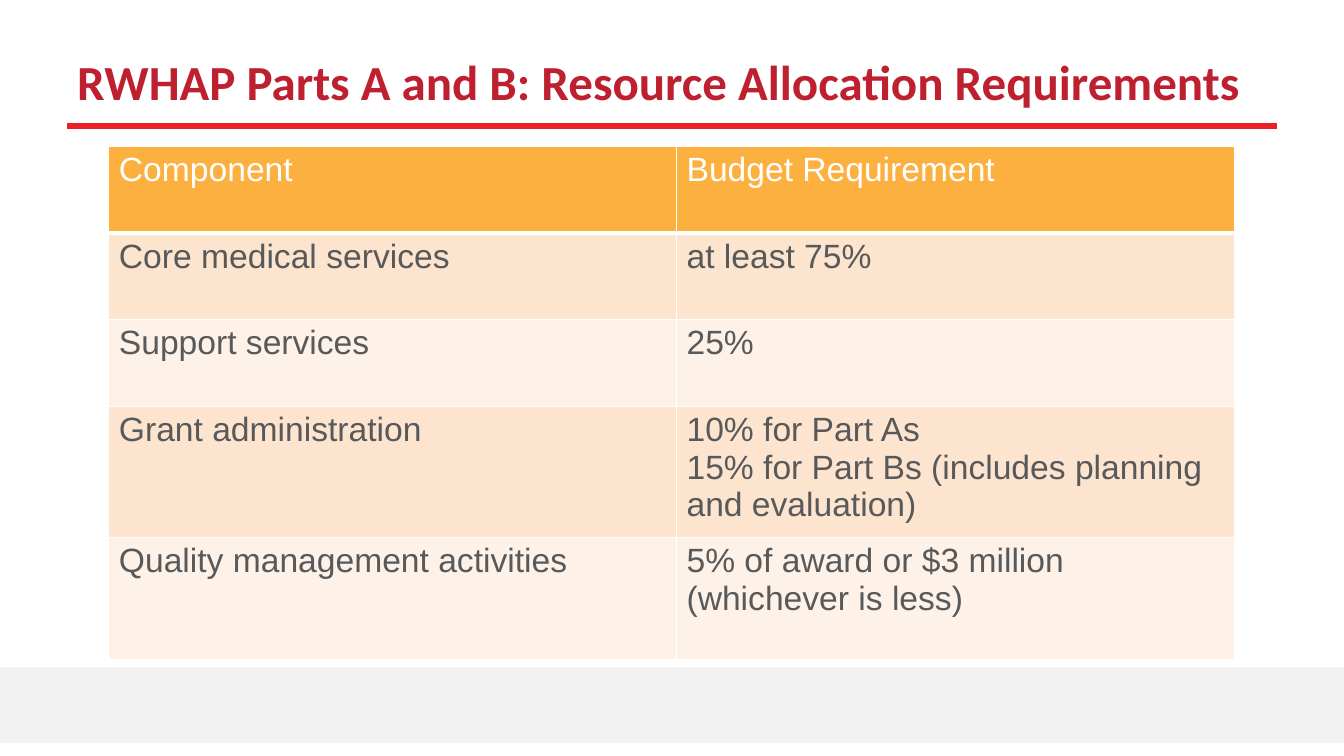
from lxml.etree import SubElement
from pptx import Presentation
from pptx.dml.color import RGBColor
from pptx.enum.shapes import MSO_CONNECTOR, MSO_SHAPE
from pptx.enum.text import MSO_ANCHOR
from pptx.oxml import parse_xml
from pptx.oxml.ns import nsdecls, qn
from pptx.util import Inches, Pt


def color(hex_string):
    return RGBColor.from_string(hex_string)


def write(text_frame, text, font="Arial", size=24, fill="58595B", bold=False):
    text_frame.word_wrap = True
    text_frame.text = text
    for paragraph in text_frame.paragraphs:
        paragraph.font.name = font
        paragraph.font.size = Pt(size)
        paragraph.font.bold = bold
        paragraph.font.color.rgb = color(fill)


presentation = Presentation()
presentation.slide_width = Inches(13.33)
presentation.slide_height = Inches(7.5)
width = presentation.slide_width
height = presentation.slide_height
margin = int(width * 0.05)
slide = presentation.slides.add_slide(presentation.slide_layouts[6])

rule_top = height // 6
rule = slide.shapes.add_connector(
    MSO_CONNECTOR.STRAIGHT, margin, rule_top, width - margin, rule_top
)
rule.line.color.rgb = color("EC2027")
rule.line.width = Pt(5)
SubElement(rule._element.spPr, qn("a:effectLst"))

footer = slide.shapes.add_shape(
    MSO_SHAPE.RECTANGLE, 0, Inches(6.62), width, height // 10
)
footer.shadow.inherit = False
footer.fill.solid()
footer.fill.fore_color.rgb = color("F2F2F2")
footer.line.fill.background()

title = slide.shapes.add_textbox(margin, int(height * 0.04), width - 2 * margin, Inches(1))
frame = title.text_frame
frame.vertical_anchor = MSO_ANCHOR.MIDDLE
frame.margin_left = frame.margin_right = Inches(0.1)
frame.margin_top = frame.margin_bottom = Inches(0.1)
write(
    frame,
    "RWHAP Parts A and B: Resource Allocation Requirements",
    font="Calibri",
    size=35,
    fill="BE202F",
    bold=True,
)

rows = [
    ("Component", "Budget Requirement"),
    ("Core medical services", "at least 75%"),
    ("Support services", "25%"),
    (
        "Grant administration",
        "10% for Part As\n15% for Part Bs (includes planning and evaluation)",
    ),
    ("Quality management activities", "5% of award or $3 million (whichever is less)"),
]
column_widths = [5.63, 5.54]
row_heights = [0.86] * 3 + [1.21] * 2
band_fills = ["FEF2E8", "FDE4CF"]

table = slide.shapes.add_table(
    len(rows), len(column_widths), Inches(1.08), Inches(1.45),
    Inches(sum(column_widths)), Inches(sum(row_heights)),
).table
for column, column_width in zip(table.columns, column_widths):
    column.width = Inches(column_width)
for row, row_height in zip(table.rows, row_heights):
    row.height = Inches(row_height)

for row_index, texts in enumerate(rows):
    header = row_index == 0
    for column_index, text in enumerate(texts):
        cell = table.cell(row_index, column_index)
        cell.fill.solid()
        cell.fill.fore_color.rgb = color("FBB040" if header else band_fills[row_index % 2])
        write(cell.text_frame, text, fill="FFFFFF" if header else "58595B")
        for position, side in enumerate("LRTB"):
            thick = (header and side == "B") or (row_index == 1 and side == "T")
            border = parse_xml(
                f'<a:ln{side} {nsdecls("a")} w="{Pt(3 if thick else 1)}">'
                '<a:solidFill><a:srgbClr val="FFFFFF"/></a:solidFill>'
                f"</a:ln{side}>"
            )
            cell._tc.get_or_add_tcPr().insert(position, border)

presentation.save("out.pptx")
